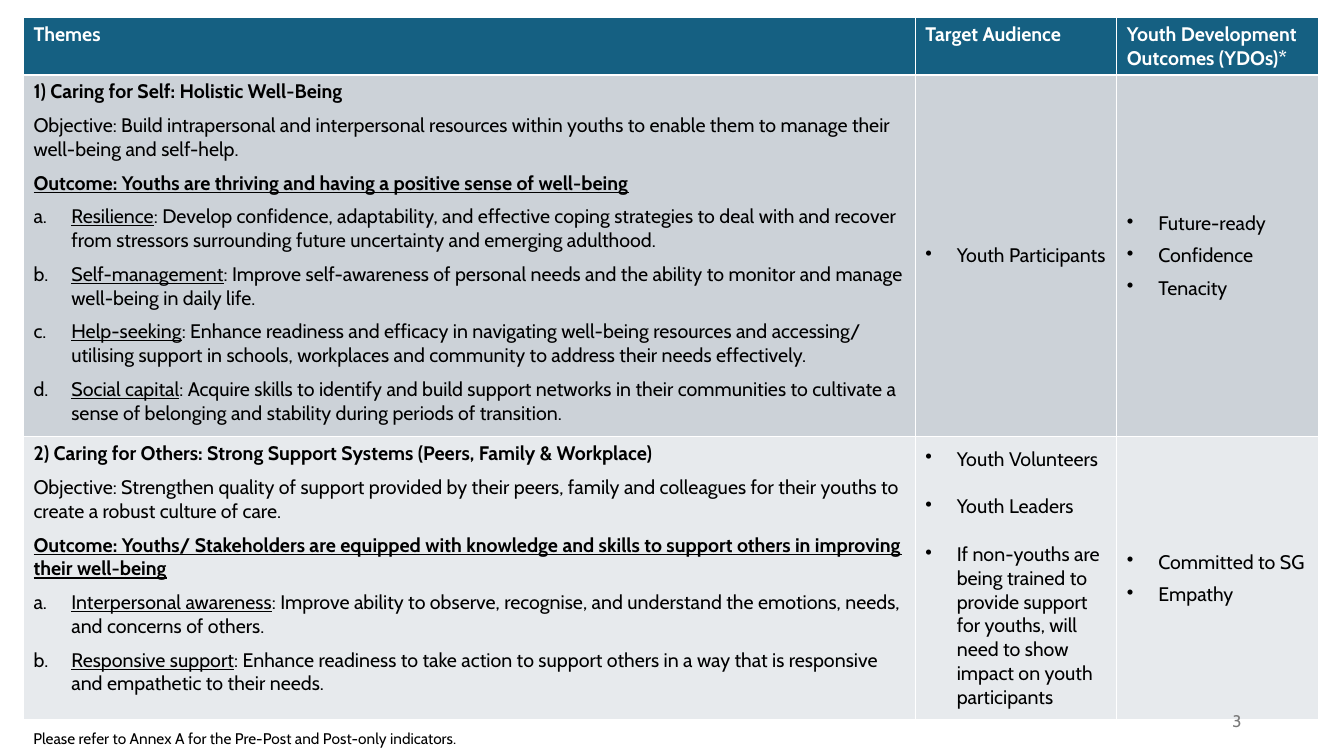
from lxml.etree import SubElement
from pptx import Presentation
from pptx.dml.color import RGBColor
from pptx.enum.text import MSO_ANCHOR, PP_ALIGN
from pptx.oxml.ns import qn
from pptx.util import Pt

FONT = "Cabin"
WHITE = RGBColor(0xFF, 0xFF, 0xFF)
BLACK = RGBColor(0, 0, 0)
GREY = RGBColor(0x79, 0x79, 0x79)
HEADER_FILL = RGBColor(0x15, 0x60, 0x82)
BAND_FILLS = [RGBColor(0xCC, 0xD2, 0xD8), RGBColor(0xE7, 0xEA, 0xED)]

COLUMN_WIDTHS = [637, 144, 144]
ROW_HEIGHTS = [41, 258.5, 202]
HEADINGS = ["Themes", "Target Audience", "Youth Development Outcomes (YDOs)*"]
THEMES = [
    {
        "title": "1) Caring for Self: Holistic Well-Being",
        "objective": "Objective: Build intrapersonal and interpersonal resources within youths "
                     "to enable them to manage their well-being and self-help.",
        "outcome": "Outcome: Youths are thriving and having a positive sense of well-being",
        "skills": [
            ("Resilience", "Develop confidence, adaptability, and effective coping strategies to deal "
                           "with and recover from stressors surrounding future uncertainty and "
                           "emerging adulthood."),
            ("Self-management", "Improve self-awareness of personal needs and the ability to monitor "
                                "and manage well-being in daily life."),
            ("Help-seeking", "Enhance readiness and efficacy in navigating well-being resources and "
                             "accessing/ utilising support in schools, workplaces and community to "
                             "address their needs effectively."),
            ("Social capital", "Acquire skills to identify and build support networks in their "
                               "communities to cultivate a sense of belonging and stability during "
                               "periods of transition."),
        ],
        "audience": ["Youth Participants"],
        "development": ["Future-ready", "Confidence", "Tenacity"],
    },
    {
        "title": "2) Caring for Others: Strong Support Systems (Peers, Family & Workplace)",
        "objective": "Objective: Strengthen quality of support provided by their peers, family and "
                     "colleagues for their youths to create a robust culture of care.",
        "outcome": "Outcome: Youths/ Stakeholders are equipped with knowledge and skills to support "
                   "others in improving their well-being",
        "skills": [
            ("Interpersonal awareness", "Improve ability to observe, recognise, and understand the "
                                        "emotions, needs, and concerns of others."),
            ("Responsive support", "Enhance readiness to take action to support others in a way that "
                                   "is responsive and empathetic to their needs."),
        ],
        "audience": [
            "Youth Volunteers",
            "Youth Leaders",
            "If non-youths are being trained to provide support for youths, will need to show "
            "impact on youth participants",
        ],
        "development": ["Committed to SG", "Empathy"],
    },
]


def style_font(para, size, color, bold=False):
    """Set the font shared by all runs of a paragraph."""
    font = para.font
    font.name, font.size, font.bold = FONT, Pt(size), bold
    font.color.rgb = color


def add_para(frame, text="", after=7, bold=False, color=BLACK):
    """Append a table paragraph, using the empty first one when it is free."""
    first = frame.paragraphs[0]
    para = frame.add_paragraph() if first.runs else first
    if text:
        para.add_run().text = text
    para.space_after = Pt(after)
    style_font(para, 14, color, bold)
    return para


def add_marker(para, indent, tag, **attributes):
    """Give a paragraph a hanging indent and a bullet or number."""
    properties = para._p.get_or_add_pPr()
    properties.set("marL", str(Pt(indent)))
    properties.set("indent", str(-Pt(indent)))
    marker = SubElement(properties, qn(tag), attributes)
    properties.find(qn("a:defRPr")).addprevious(marker)


def fill_cell(cell, color):
    """Fill a cell with one solid colour."""
    cell.fill.solid()
    cell.fill.fore_color.rgb = color


def write_theme(cell, theme):
    """Write a theme's title, objective, outcome and lettered skills."""
    frame = cell.text_frame
    add_para(frame, theme["title"], bold=True)
    add_para(frame, theme["objective"])
    add_para(frame, theme["outcome"], bold=True).font.underline = True
    for name, aim in theme["skills"]:
        para = add_para(frame, name)
        para.runs[0].font.underline = True
        para.add_run().text = f": {aim}"
        add_marker(para, 27, "a:buAutoNum", type="alphaLcPeriod")


def write_bullets(cell, items, gap):
    """Write a vertically centred bullet list."""
    cell.vertical_anchor = MSO_ANCHOR.MIDDLE
    for item in items:
        after = 0 if gap > 6 and item == items[-1] else gap
        para = add_para(cell.text_frame, item, after)
        add_marker(para, 22.5, "a:buChar", char="•")


def add_theme_table(page, left, top):
    """Add the table of themes, audiences and outcomes."""
    table = page.shapes.add_table(
        len(ROW_HEIGHTS), len(COLUMN_WIDTHS), Pt(left), Pt(top),
        Pt(sum(COLUMN_WIDTHS)), Pt(sum(ROW_HEIGHTS))).table
    for column, width in zip(table.columns, COLUMN_WIDTHS):
        column.width = Pt(width)
    for row, height in zip(table.rows, ROW_HEIGHTS):
        row.height = Pt(height)
    for cell, heading in zip(table.rows[0].cells, HEADINGS):
        fill_cell(cell, HEADER_FILL)
        add_para(cell.text_frame, heading, 6, True, WHITE)
    for index, (theme, color) in enumerate(zip(THEMES, BAND_FILLS), 1):
        cells = list(table.rows[index].cells)
        for cell in cells:
            fill_cell(cell, color)
        write_theme(cells[0], theme)
        write_bullets(cells[1], theme["audience"], 17 if len(theme["audience"]) > 1 else 6)
        write_bullets(cells[2], theme["development"], 6)


def add_label(page, text, left, top, width, height, size, color,
              align=PP_ALIGN.LEFT, anchor=MSO_ANCHOR.TOP):
    """Add a one-line text box."""
    frame = page.shapes.add_textbox(Pt(left), Pt(top), Pt(width), Pt(height)).text_frame
    frame.word_wrap = True
    frame.vertical_anchor = anchor
    para = frame.paragraphs[0]
    para.add_run().text = text
    para.alignment = align
    style_font(para, size, color)


def main():
    """Build the slide and save the deck."""
    deck = Presentation()
    deck.slide_width, deck.slide_height = Pt(960), Pt(540)
    page = deck.slides.add_slide(deck.slide_layouts[6])
    add_theme_table(page, 16.75, 12.25)
    add_label(page, "Please refer to Annex A for the Pre-Post and Post-only indicators.",
              16.75, 517.5, 946, 20.5, 11, BLACK)
    add_label(page, "3", 678, 500.5, 216, 28.75, 12, GREY, PP_ALIGN.RIGHT, MSO_ANCHOR.MIDDLE)
    deck.save("out.pptx")


if __name__ == "__main__":
    main()
